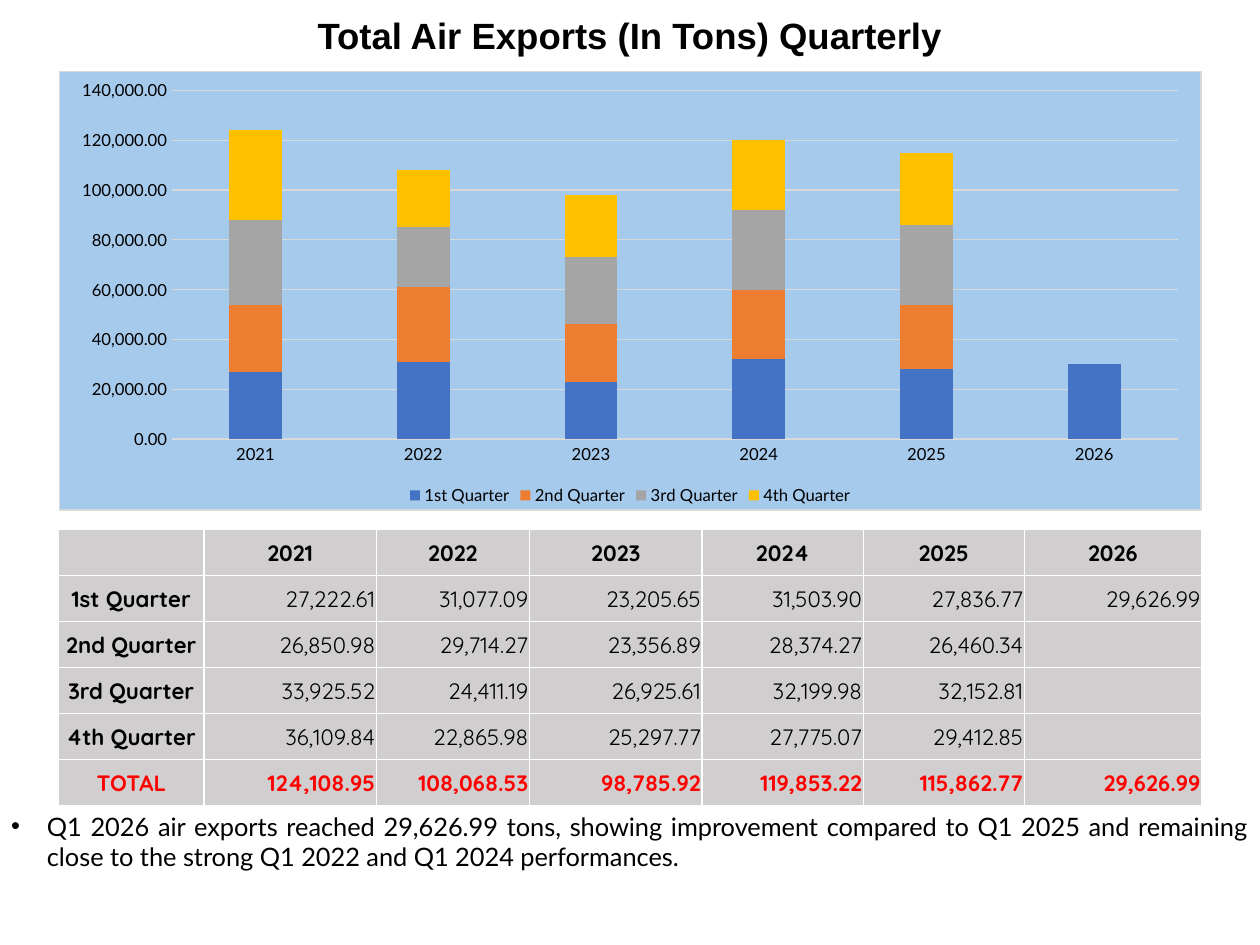
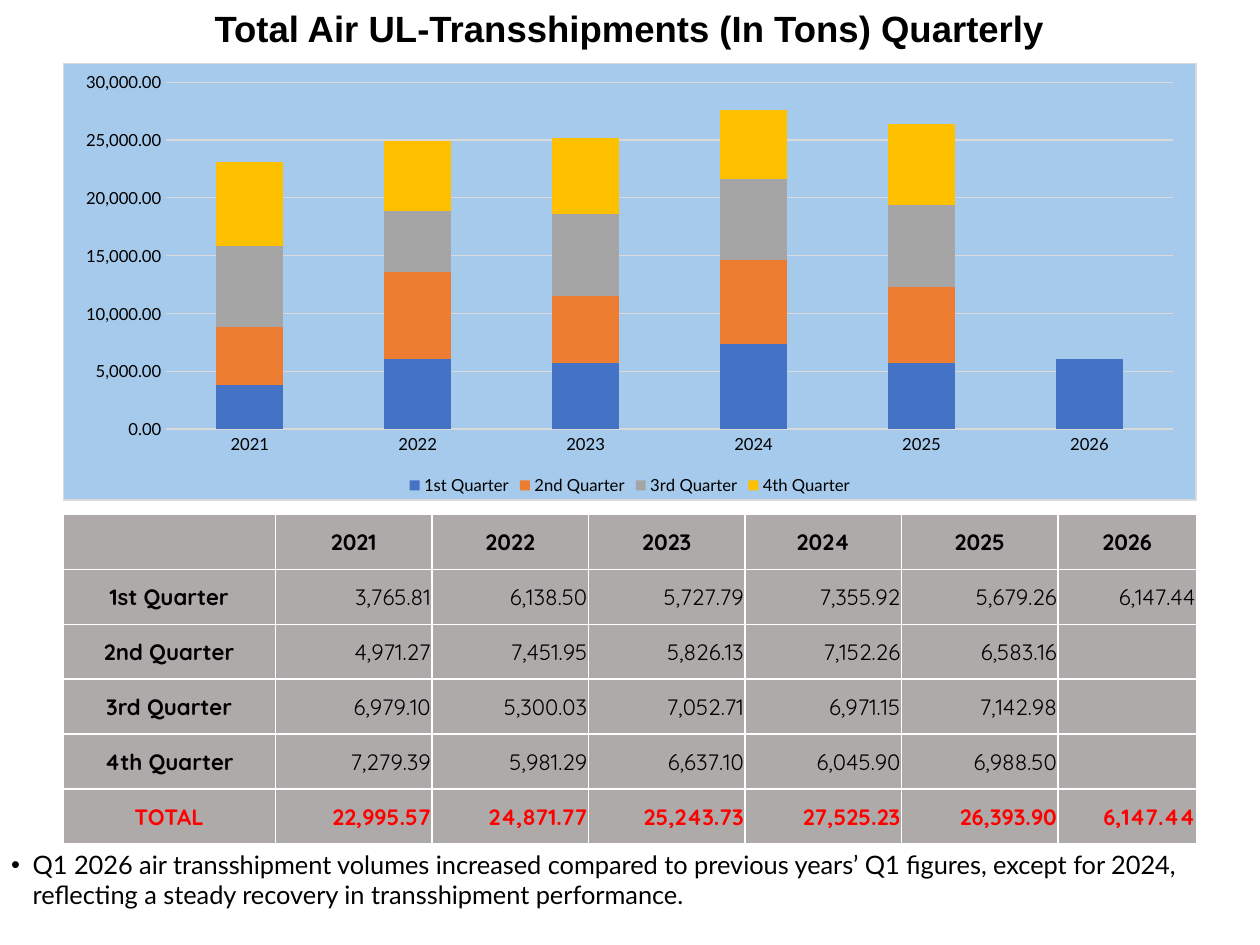
from lxml import etree
from pptx import Presentation
from pptx.chart.data import CategoryChartData
from pptx.dml.color import RGBColor
from pptx.enum.chart import XL_CHART_TYPE, XL_LEGEND_POSITION, XL_TICK_MARK
from pptx.enum.text import MSO_ANCHOR, PP_ALIGN
from pptx.oxml import parse_xml
from pptx.oxml.ns import nsdecls, qn
from pptx.util import Pt

STACKED = XL_CHART_TYPE.COLUMN_STACKED
BOTTOM = XL_LEGEND_POSITION.BOTTOM
NO_TICK = XL_TICK_MARK.NONE
MIDDLE = MSO_ANCHOR.MIDDLE
LEFT, CENTER, RIGHT, JUSTIFY = PP_ALIGN.LEFT, PP_ALIGN.CENTER, PP_ALIGN.RIGHT, PP_ALIGN.JUSTIFY

BLACK = RGBColor(0, 0, 0)
RED = RGBColor(0xFF, 0, 0)
RULE = RGBColor(0xD9, 0xD9, 0xD9)
SKY = RGBColor(0xA6, 0xCA, 0xEC)
WHITE = RGBColor(0xFF, 0xFF, 0xFF)
SILVER = RGBColor(0xD0, 0xCE, 0xCE)
GREY = RGBColor(0xAE, 0xAA, 0xAA)
HUES = [
    RGBColor(0x44, 0x72, 0xC4),
    RGBColor(0xED, 0x7D, 0x31),
    RGBColor(0xA5, 0xA5, 0xA5),
    RGBColor(0xFF, 0xC0, 0x00),
]

WIDTH, HEIGHT = 793.75, 595.25
YEARS = ["2021", "2022", "2023", "2024", "2025", "2026"]
TERMS = ["1st Quarter", "2nd Quarter", "3rd Quarter", "4th Quarter"]
TITLE = {"name": "Arial", "size": Pt(23), "bold": True}
NOTE = {"name": "Lato", "size": Pt(16)}
LABEL = {"name": "Lato", "size": Pt(10.5)}
ENTRY = {"name": "Quicksand", "size": Pt(14)}
PAD = {"margin_left": Pt(0.75), "margin_right": Pt(0.75), "margin_top": Pt(0.75),
       "margin_bottom": 0, "vertical_anchor": MIDDLE}
HEAD = {"margin_left": 0, "margin_right": 0, "margin_top": Pt(2), "margin_bottom": 0,
        "vertical_anchor": MIDDLE, "word_wrap": True}

PAGES = [
    {
        "title": "Total Air Exports (In Tons) Quarterly",
        "head": 42.5, "left": 37, "width": 720,
        "chart": (44.64, 277), "gap": 219, "top": 140000, "step": 20000, "digits": -3,
        "table": (333.36, 29), "fill": SILVER,
        "cols": [91.44, 108.72, 96.48, 108.72, 101.52, 101.52, 111.6],
        "rows": [
            [27222.61, 31077.09, 23205.65, 31503.90, 27836.77, 29626.99],
            [26850.98, 29714.27, 23356.89, 28374.27, 26460.34, None],
            [33925.52, 24411.19, 26925.61, 32199.98, 32152.81, None],
            [36109.84, 22865.98, 25297.77, 27775.07, 29412.85, None],
        ],
        "note": "Q1 2026 air exports reached 29,626.99 tons, showing improvement compared to "
                "Q1 2025 and remaining close to the strong Q1 2022 and Q1 2024 performances.",
        "base": 507.25, "indent": 22.5, "align": JUSTIFY,
    },
    {
        "title": "Total Air UL-Transshipments (In Tons) Quarterly",
        "head": 33, "left": 39.6, "width": 714.24,
        "chart": (39.6, 275.76), "gap": 150, "top": 30000, "step": 5000, "digits": -2,
        "table": (324, 34.6), "fill": GREY,
        "cols": [133.92] + [98.64] * 5 + [87.12],
        "rows": [
            [3765.81, 6138.50, 5727.79, 7355.92, 5679.26, 6147.44],
            [4971.27, 7451.95, 5826.13, 7152.26, 6583.16, None],
            [6979.10, 5300.03, 7052.71, 6971.15, 7142.98, None],
            [7279.39, 5981.29, 6637.10, 6045.90, 6988.50, None],
        ],
        "note": "Q1 2026 air transshipment volumes increased compared to previous years’ Q1 "
                "figures, except for 2024, reflecting a steady recovery in transshipment performance.",
        "base": 531.36, "indent": 13.5, "align": LEFT,
    },
]


def apply(item, values):
    for key, value in values.items():
        setattr(item, key, value)


def write(para, text, look, align, color=BLACK):
    para.alignment = align
    run = para.add_run()
    run.text = text
    apply(run.font, look)
    run.font.color.rgb = color


deck = Presentation()
deck.slide_width = Pt(WIDTH)
deck.slide_height = Pt(HEIGHT)

for page in PAGES:
    slide = deck.slides.add_slide(deck.slide_layouts[6])
    left, width = Pt(page["left"]), Pt(page["width"])

    frame = slide.shapes.add_textbox(left, 0, width, Pt(page["head"])).text_frame
    apply(frame, HEAD)
    write(frame.paragraphs[0], page["title"], TITLE, CENTER)

    base = page["base"]
    frame = slide.shapes.add_textbox(0, Pt(base), Pt(WIDTH), Pt(HEIGHT - base)).text_frame
    frame.word_wrap = True
    para = frame.paragraphs[0]
    props = para._p.get_or_add_pPr()
    props.set("marL", str(Pt(page["indent"])))
    props.set("indent", str(-Pt(page["indent"])))
    etree.SubElement(props, qn("a:buFont")).set("typeface", "Arial")
    etree.SubElement(props, qn("a:buChar")).set("char", "•")
    write(para, page["note"], NOTE, page["align"])

    data = CategoryChartData(number_format="#,##0.00")
    data.categories = YEARS
    for term, row in zip(TERMS, page["rows"]):
        data.add_series(term, [None if n is None else round(n, page["digits"]) for n in row])
    top, height = page["chart"]
    chart = slide.shapes.add_chart(STACKED, left, Pt(top), width, Pt(height), data).chart
    apply(chart, {"has_title": False, "has_legend": True})
    apply(chart.legend, {"position": BOTTOM, "include_in_layout": False})
    apply(chart.font, LABEL)
    chart.font.color.rgb = BLACK
    chart.element.find(qn("c:chart")).addnext(parse_xml(
        f'<c:spPr {nsdecls("c", "a")}><a:solidFill><a:srgbClr val="{SKY}"/></a:solidFill>'
        f'<a:ln w="{Pt(0.75)}"><a:solidFill><a:srgbClr val="{RULE}"/></a:solidFill></a:ln></c:spPr>'))

    plot = chart.plots[0]
    apply(plot, {"gap_width": page["gap"], "overlap": 100, "vary_by_categories": False})
    for series, hue in zip(plot.series, HUES):
        series.format.fill.solid()
        series.format.fill.fore_color.rgb = hue

    years, tons = chart.category_axis, chart.value_axis
    for axis in (years, tons):
        apply(axis, {"major_tick_mark": NO_TICK, "minor_tick_mark": NO_TICK})
    apply(tons, {"minimum_scale": 0, "maximum_scale": page["top"],
                 "major_unit": page["step"], "has_major_gridlines": True})
    apply(tons.tick_labels, {"number_format": "#,##0.00", "number_format_is_linked": False})
    tons.format.line.fill.background()
    for line in (years.format.line, tons.major_gridlines.format.line):
        line.width = Pt(0.75)
        line.color.rgb = RULE

    sums = [sum(n for n in col if n is not None) for col in zip(*page["rows"])]
    grid = [[""] + YEARS]
    for name, row in zip(TERMS + ["TOTAL"], page["rows"] + [sums]):
        grid.append([name] + ["" if n is None else f"{n:,.2f}" for n in row])

    top, height = page["table"]
    table = slide.shapes.add_table(
        len(grid), len(grid[0]), left, Pt(top), width, Pt(height * len(grid))).table
    apply(table, {"first_row": False, "horz_banding": False})
    for col, span in zip(table.columns, page["cols"]):
        col.width = Pt(span)
    for r, row in enumerate(grid):
        table.rows[r].height = Pt(height)
        last = r == len(grid) - 1
        for c, text in enumerate(row):
            cell = table.cell(r, c)
            apply(cell, PAD)
            cell.fill.solid()
            cell.fill.fore_color.rgb = page["fill"]
            props = cell._tc.get_or_add_tcPr()
            for i, side in enumerate(("lnL", "lnR", "lnT", "lnB")):
                props.insert(i, parse_xml(
                    f'<a:{side} {nsdecls("a")} w="{Pt(1)}"><a:solidFill>'
                    f'<a:srgbClr val="{WHITE}"/></a:solidFill></a:{side}>'))
            para = cell.text_frame.paragraphs[0]
            if text:
                look = {**ENTRY, "bold": r == 0 or c == 0 or last}
                write(para, text, look, RIGHT if r and c else CENTER, RED if last else BLACK)
            else:
                apply(para.font, ENTRY)

deck.save("out.pptx")
